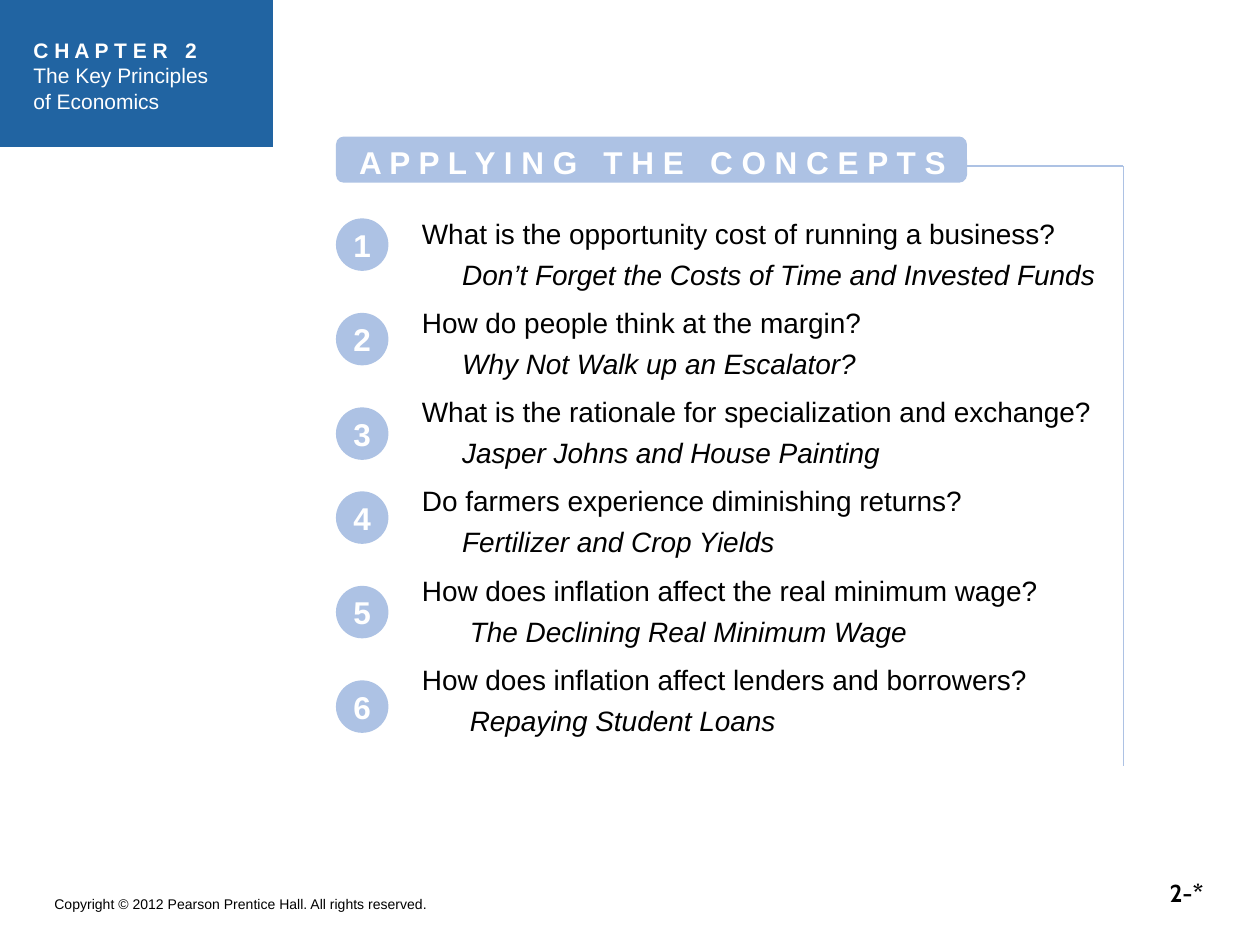
from lxml.etree import SubElement
from pptx import Presentation
from pptx.dml.color import RGBColor
from pptx.enum.shapes import MSO_CONNECTOR, MSO_SHAPE
from pptx.enum.text import MSO_ANCHOR, PP_ALIGN
from pptx.oxml.ns import qn
from pptx.util import Inches, Pt

COLORS = {"navy": "2164A2", "pale": "ADC2E4", "white": "FFFFFF", "black": "000000"}
UNIT = 1 / 12  # grid step in inches: 120 columns by 90 rows

CONCEPTS = [
    ("What is the opportunity cost of running a business?",
     "Don’t Forget the Costs of Time and Invested Funds", 0.32),
    ("How do people think at the margin?",
     "Why Not Walk up an Escalator?", 0.32),
    ("What is the rationale for specialization and exchange?",
     "Jasper Johns and House Painting", 0.32),
    ("Do farmers experience diminishing returns?",
     "Fertilizer and Crop Yields", 0.32),
    ("How does inflation affect the real minimum wage?",
     "The Declining Real Minimum Wage", 0.38),
    ("How does inflation affect lenders and borrowers?",
     "Repaying Student Loans", 0.38),
]


def grid(*steps):
    return [Inches(step * UNIT) for step in steps]


def color(name):
    return RGBColor.from_string(COLORS[name])


def style(par, size, tint, bold=False, italic=False, face="Arial"):
    for run in par.runs:
        font = run.font
        font.name, font.size = face, Pt(size)
        font.bold, font.italic = bold, italic
        font.color.rgb = color(tint)


def add_block(slide, kind, box, fill):
    shape = slide.shapes.add_shape(kind, *grid(*box))
    shape.shadow.inherit = False
    shape.fill.solid()
    shape.fill.fore_color.rgb = color(fill)
    shape.line.fill.background()
    return shape


def add_text(slide, box, text):
    frame = slide.shapes.add_textbox(*grid(*box)).text_frame
    frame.word_wrap = True
    frame.text = text
    return frame


def add_rule(slide, start, end):
    line = slide.shapes.add_connector(MSO_CONNECTOR.STRAIGHT, *grid(*start, *end))
    line.line.color.rgb = color("pale")
    line.line.width = Pt(0.75)
    SubElement(line._element.spPr, qn("a:effectLst"))


def add_chapter(slide, box):
    left, top, width, height = box
    add_block(slide, MSO_SHAPE.RECTANGLE, box, "navy")
    name = " ".join("CHAPTER 2")
    frame = add_text(slide, (left + 2, top + 3, width + 1, height * 0.6),
                     name + "\nThe Key Principles\vof Economics")
    for par, bold in zip(frame.paragraphs, (True, False)):
        style(par, 12, "white", bold)


def add_frame(slide, box):
    """Draw the rules along the top and right of the box."""
    left, top, width, height = box
    right = left + width
    add_rule(slide, (right, top), (right, top + height))
    add_rule(slide, (left, top), (right, top))


def add_banner(slide, box):
    left, top, width, height = box
    block = add_block(slide, MSO_SHAPE.ROUNDED_RECTANGLE, box, "pale")
    block.adjustments[0] = 0.17
    title = slide.shapes.title
    title.left, title.top, title.width, title.height = grid(
        left + 1, top, width - 1, height + 0.4)
    block._element.addnext(title._element)  # bring the title above its banner
    frame = title.text_frame
    frame.text = " ".join("APPLYING THE CONCEPTS")
    frame.vertical_anchor = MSO_ANCHOR.TOP
    frame.word_wrap = True
    par = frame.paragraphs[0]
    par.alignment = PP_ALIGN.LEFT
    style(par, 18, "white", True)


def add_badges(slide, box):
    left, top, size, pitch = box
    for index in range(len(CONCEPTS)):
        lift = 1 if index >= 3 else 0  # the lower half sits one row higher
        spot = (left, top + index * pitch - lift, size, size)
        frame = add_block(slide, MSO_SHAPE.OVAL, spot, "pale").text_frame
        frame.margin_left = frame.margin_right = 0
        frame.margin_top = frame.margin_bottom = 0
        frame.vertical_anchor = MSO_ANCHOR.MIDDLE
        frame.text = str(index + 1)
        par = frame.paragraphs[0]
        par.alignment = PP_ALIGN.CENTER
        style(par, 18, "white", True)


def add_concepts(slide, box):
    lines = [line for ask, answer, _ in CONCEPTS for line in (ask, answer)]
    pars = add_text(slide, box, "\n".join(lines)).paragraphs
    for par in pars[1:]:
        par.space_before = Pt(8.7)
    pars[0].line_spacing = 0.75
    for ask, answer, (_, _, indent) in zip(pars[::2], pars[1::2], CONCEPTS):
        style(ask, 16, "black")
        style(answer, 16, "black", italic=True)
        answer.line_spacing = 0.75
        answer._p.get_or_add_pPr().set("marL", str(Inches(indent)))


def add_footer(slide, note, page):
    par = add_text(slide, note,
                   "Copyright © 2012 Pearson Prentice Hall. All rights reserved.").paragraphs[0]
    style(par, 8, "black")
    frame = add_text(slide, page, "2-*")
    frame.vertical_anchor = MSO_ANCHOR.MIDDLE
    par = frame.paragraphs[0]
    par.alignment = PP_ALIGN.CENTER
    style(par, 14, "black", True, face="Cabin")


def main():
    deck = Presentation()
    deck.slide_width, deck.slide_height = grid(120, 90)
    slide = deck.slides.add_slide(deck.slide_layouts[5])
    add_chapter(slide, (0, 0, 26, 14))
    add_footer(slide, note=(4, 84.7, 60, 2.8), page=(108, 82, 10, 6))
    add_frame(slide, (91, 15.8, 16, 57.2))
    add_banner(slide, (32, 13, 60.1, 4.4))
    add_badges(slide, (32, 20.8, 5, 9))
    add_concepts(slide, (39, 20.8, 69, 51.8))
    deck.save("out.pptx")


if __name__ == "__main__":
    main()
